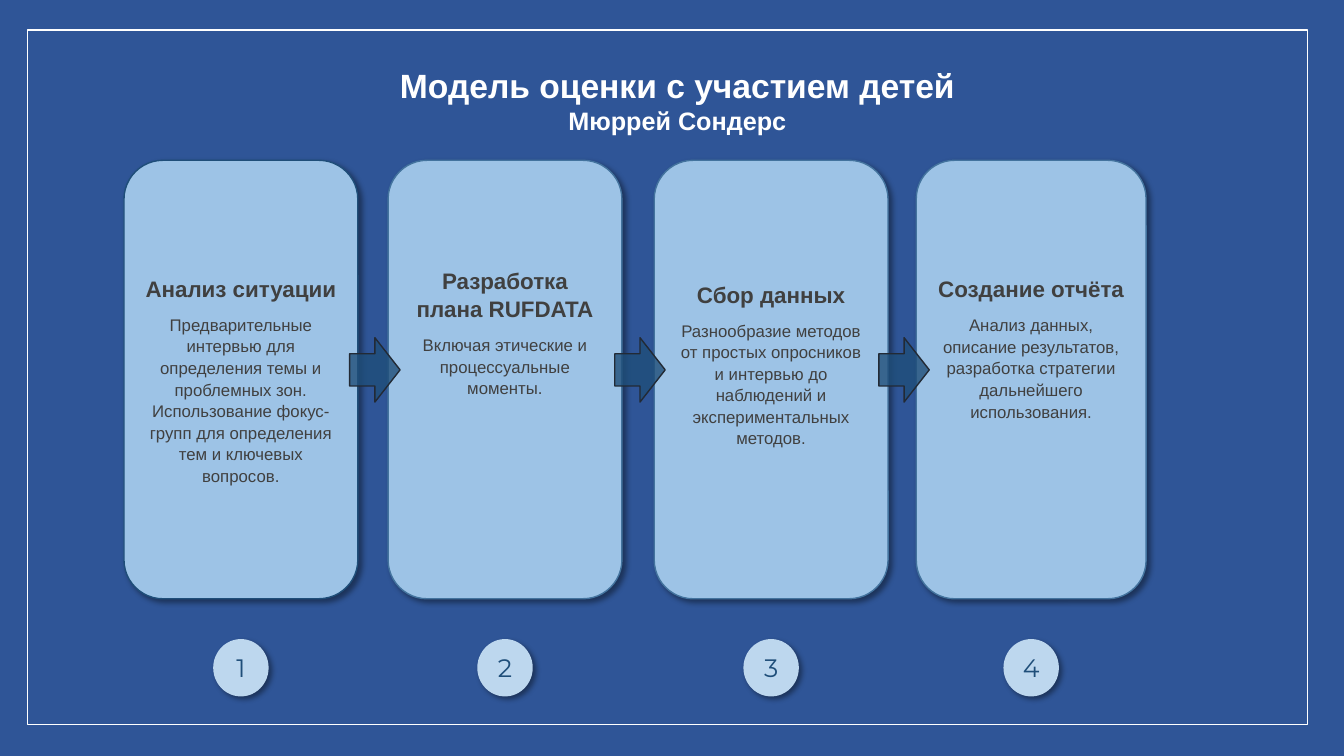
from lxml import etree
from pptx import Presentation
from pptx.dml.color import RGBColor
from pptx.enum.shapes import MSO_SHAPE
from pptx.enum.text import MSO_ANCHOR, MSO_AUTO_SIZE, PP_ALIGN
from pptx.oxml.ns import qn
from pptx.util import Pt

CENTER = PP_ALIGN.CENTER
TOP, MIDDLE = MSO_ANCHOR.TOP, MSO_ANCHOR.MIDDLE
NO_FIT = MSO_AUTO_SIZE.NONE
RECTANGLE, ROUNDED = MSO_SHAPE.RECTANGLE, MSO_SHAPE.ROUNDED_RECTANGLE
OVAL, ARROW = MSO_SHAPE.OVAL, MSO_SHAPE.RIGHT_ARROW

TITLE = [("Модель оценки с участием детей", 24), ("Мюррей Сондерс", 18)]
# left, width, border, lift of the text in lines, heading, text
STAGES = [
    (88.56, 167.04, "1F4E79", 0, "Анализ ситуации",
     "Предварительные интервью для определения темы и проблемных зон. "
     "Использование фокус-групп для определения тем и ключевых вопросов."),
    (277.2, 167.04, "43739E", 3, "Разработка плана RUFDATA",
     "Включая этические и процессуальные моменты."),
    (467.28, 167.04, "43739E", 1, "Сбор данных",
     "Разнообразие методов от простых опросников и интервью до наблюдений "
     "и экспериментальных методов."),
    (654.48, 164.16, "43739E", 2, "Создание отчёта",
     "Анализ данных, описание результатов, разработка стратегии "
     "дальнейшего использования."),
]
CARD_TOP, CARD_HEIGHT = 114.5, 313.2
LINE_LIFT = 22.8
BADGE_TOP, BADGE_WIDTH, BADGE_HEIGHT = 456.5, 39.6, 41
ARROW_TOP, ARROW_WIDTH, ARROW_HEIGHT, ARROW_SHIFT = 241.2, 36, 46, 1.4


def color(value):
    return RGBColor.from_string(value)


def add_box(page, kind, left, top, width, height, fill=None, line=None):
    box = page.shapes.add_shape(kind, Pt(left), Pt(top), Pt(width), Pt(height))
    box.shadow.inherit = False
    if fill:
        box.fill.solid()
        box.fill.fore_color.rgb = color(fill)
    else:
        box.fill.background()
    if line:
        box.line.color.rgb = color(line)
        box.line.width = Pt(1)
    else:
        box.line.fill.background()
    return box


def add_shadow(box):
    effects = box._element.spPr.find(qn("a:effectLst"))
    shadow = etree.SubElement(
        effects, qn("a:outerShdw"), blurRad=str(Pt(4)), dist=str(Pt(3)),
        dir="2700000", algn="tl", rotWithShape="0")
    black = etree.SubElement(shadow, qn("a:srgbClr"), val="000000")
    etree.SubElement(black, qn("a:alpha"), val="40000")


def write_lines(frame, lines, ink, face="Arial", spacing=None, after=0):
    """Fill a text frame with (text, size, bold) paragraphs."""
    for index, (text, size, bold) in enumerate(lines):
        para = frame.add_paragraph() if index else frame.paragraphs[0]
        para.text = text
        para.alignment = CENTER
        para.space_before, para.space_after = Pt(0), Pt(after)
        if spacing:
            para.line_spacing = spacing
        para.font.name, para.font.size, para.font.bold = face, Pt(size), bold
        para.font.color.rgb = color(ink)


def add_title(page):
    title = page.shapes.title
    title.left, title.top, title.width, title.height = (
        Pt(139.7), Pt(42.5), Pt(688.3), Pt(58.3))
    frame = title.text_frame
    frame.word_wrap, frame.auto_size, frame.vertical_anchor = True, NO_FIT, TOP
    write_lines(frame, [(text, size, True) for text, size in TITLE], "FFFFFF")


def add_card(page, left, width, border, lift, heading, text):
    card = add_box(page, ROUNDED, left, CARD_TOP, width, CARD_HEIGHT, "9DC3E6", border)
    add_shadow(card)
    frame = card.text_frame
    frame.word_wrap, frame.vertical_anchor = True, MIDDLE
    frame.margin_bottom = Pt(3.6 + lift * LINE_LIFT)
    write_lines(frame, [(heading, 16, True), (text, 12, False)], "404040",
                spacing=1.07, after=8)


def add_badge(page, number, center):
    badge = add_box(page, OVAL, center - BADGE_WIDTH / 2, BADGE_TOP,
                    BADGE_WIDTH, BADGE_HEIGHT, "BDD7EE")
    add_shadow(badge)
    frame = badge.text_frame
    frame.word_wrap, frame.vertical_anchor = True, MIDDLE
    frame.margin_left = frame.margin_right = 0
    write_lines(frame, [(str(number), 18, False)], "1F4E79", "Montserrat")


def add_arrow(page, center):
    arrow = add_box(page, ARROW, center - ARROW_WIDTH / 2, ARROW_TOP,
                    ARROW_WIDTH, ARROW_HEIGHT, "1F4E79", "222A35")
    fill = arrow._element.spPr.find(qn("a:solidFill"))
    etree.SubElement(fill[0], qn("a:alpha"), val="80000")


def main():
    deck = Presentation()
    deck.slide_width, deck.slide_height = Pt(960), Pt(540)
    page = deck.slides.add_slide(deck.slide_layouts[5])
    page.background.fill.solid()
    page.background.fill.fore_color.rgb = color("2F5597")

    add_title(page)
    for number, stage in enumerate(STAGES, 1):
        left, width = stage[:2]
        add_card(page, *stage)
        add_badge(page, number, left + width / 2)
    for before, following in zip(STAGES, STAGES[1:]):
        gap_center = (before[0] + before[1] + following[0]) / 2
        add_arrow(page, gap_center + ARROW_SHIFT)
    add_box(page, RECTANGLE, 19.5, 21.5, 914.5, 496, line="FFFFFF")
    deck.save("out.pptx")


if __name__ == "__main__":
    main()
